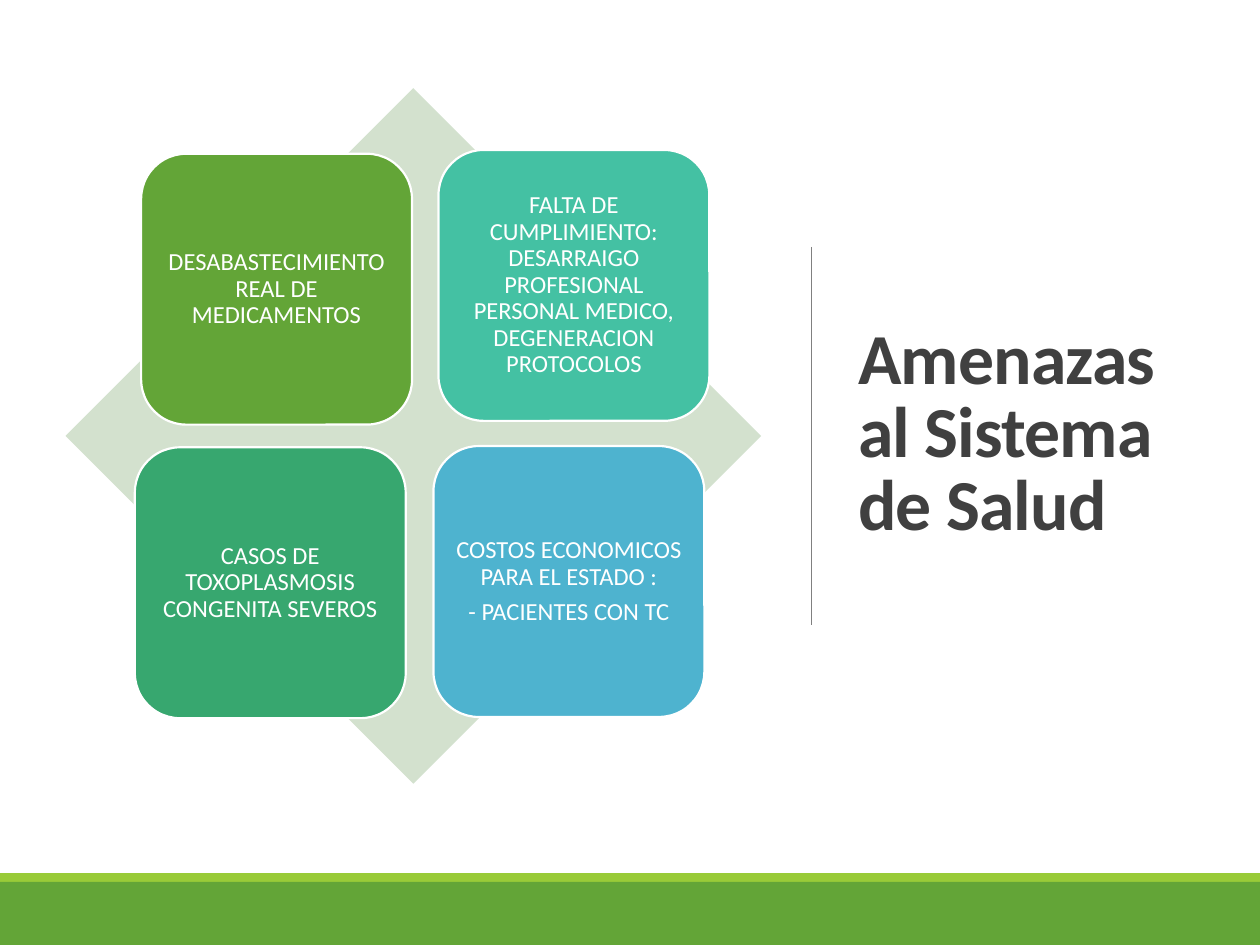
"""Build the slide on threats to the health system."""
from dataclasses import dataclass

from lxml import etree
from pptx import Presentation
from pptx.dml.color import RGBColor
from pptx.enum import shapes, text
from pptx.oxml.ns import qn
from pptx.util import Inches, Pt


@dataclass(frozen=True)
class Theme:
    font: str = "Calibri"
    title_size: float = 41
    threat_size: float = 14
    heading: str = "404040"
    white: str = "FFFFFF"
    divider: str = "808080"
    diamond: str = "D3E1CE"
    accent: str = "99CB38"
    green: str = "63A537"
    emerald: str = "37A76F"
    teal: str = "44C1A3"
    blue: str = "4EB3CF"


@dataclass(frozen=True)
class Threat:
    left: float
    top: float
    fill: str
    lines: tuple[str, ...]


THEME = Theme()
THREAT_SIDE = 2.15
THREATS = (
    Threat(1.12, 1.22, THEME.green, ("DESABASTECIMIENTO REAL DE MEDICAMENTOS",)),
    Threat(1.07, 3.55, THEME.emerald, ("CASOS DE TOXOPLASMOSIS CONGENITA SEVEROS",)),
    Threat(3.48, 1.19, THEME.teal, (
        "FALTA DE CUMPLIMIENTO: DESARRAIGO PROFESIONAL PERSONAL MEDICO, "
        "DEGENERACION PROTOCOLOS",)),
    Threat(3.44, 3.54, THEME.blue, (
        "COSTOS ECONOMICOS PARA EL ESTADO :", "- PACIENTES CON TC")),
)


def rgb(colour: str) -> RGBColor:
    return RGBColor.from_string(colour)


def add_block(slide, kind, left: float, top: float, width: float, height: float, fill: str):
    """Add a flat filled shape without outline."""
    block = slide.shapes.add_shape(kind, Inches(left), Inches(top), Inches(width), Inches(height))
    block.shadow.inherit = False
    block.fill.solid()
    block.fill.fore_color.rgb = rgb(fill)
    block.line.fill.background()
    return block


def add_threat(slide, threat: Threat) -> None:
    """Add one rounded tile with its centred wording."""
    tile = add_block(slide, shapes.MSO_SHAPE.ROUNDED_RECTANGLE, threat.left, threat.top,
                     THREAT_SIDE, THREAT_SIDE, threat.fill)
    tile.line.color.rgb = rgb(THEME.white)
    tile.line.width = Pt(1.25)
    frame = tile.text_frame
    frame.word_wrap = True
    frame.vertical_anchor = text.MSO_ANCHOR.MIDDLE
    frame.margin_left = frame.margin_right = Inches(0.06)
    frame.margin_top = frame.margin_bottom = Inches(0.06)
    frame.text = "\n".join(threat.lines)
    for paragraph in frame.paragraphs:
        paragraph.alignment = text.PP_ALIGN.CENTER
        paragraph.line_spacing = 0.9
        paragraph.space_after = Pt(0.35 * THEME.threat_size)
        paragraph.font.name = THEME.font
        paragraph.font.size = Pt(THEME.threat_size)
        paragraph.font.color.rgb = rgb(THEME.white)


def format_title(slide) -> None:
    """Place and style the slide title."""
    title = slide.shapes.title
    title.left, title.top = Inches(6.71), Inches(0.69)
    title.width, title.height = Inches(2.77), Inches(5.53)
    frame = title.text_frame
    frame.text = "Amenazas al Sistema de Salud"
    frame.word_wrap = True
    frame.auto_size = text.MSO_AUTO_SIZE.NONE
    frame.vertical_anchor = text.MSO_ANCHOR.MIDDLE
    heading = frame.paragraphs[0]
    heading.alignment = text.PP_ALIGN.LEFT
    heading.line_spacing = 0.85
    heading.font.name = THEME.font
    heading.font.size = Pt(THEME.title_size)
    heading.font.bold = True
    heading.font.color.rgb = rgb(THEME.heading)
    heading.runs[0]._r.get_or_add_rPr().set("spc", "-50")


def add_divider(slide) -> None:
    """Add the thin vertical rule beside the title."""
    divider = slide.shapes.add_connector(shapes.MSO_CONNECTOR.STRAIGHT, Inches(6.44),
                                         Inches(1.96), Inches(6.44), Inches(4.96))
    divider.line.color.rgb = rgb(THEME.divider)
    divider.line.width = Pt(0.5)
    etree.SubElement(divider._element.spPr, qn("a:effectLst"))


def main() -> None:
    """Build and save the presentation."""
    deck = Presentation()
    deck.slide_width, deck.slide_height = Inches(10), Inches(7.5)
    slide = deck.slides.add_slide(deck.slide_layouts.get_by_name("Title Only"))
    format_title(slide)
    add_divider(slide)
    add_block(slide, shapes.MSO_SHAPE.RECTANGLE, 0, 6.93, 10, 0.07, THEME.accent)
    add_block(slide, shapes.MSO_SHAPE.RECTANGLE, 0, 7, 10, 0.5, THEME.green)
    add_block(slide, shapes.MSO_SHAPE.DIAMOND, 0.52, 0.7, 5.52, 5.52, THEME.diamond)
    for threat in THREATS:
        add_threat(slide, threat)
    deck.save("out.pptx")


if __name__ == "__main__":
    main()
